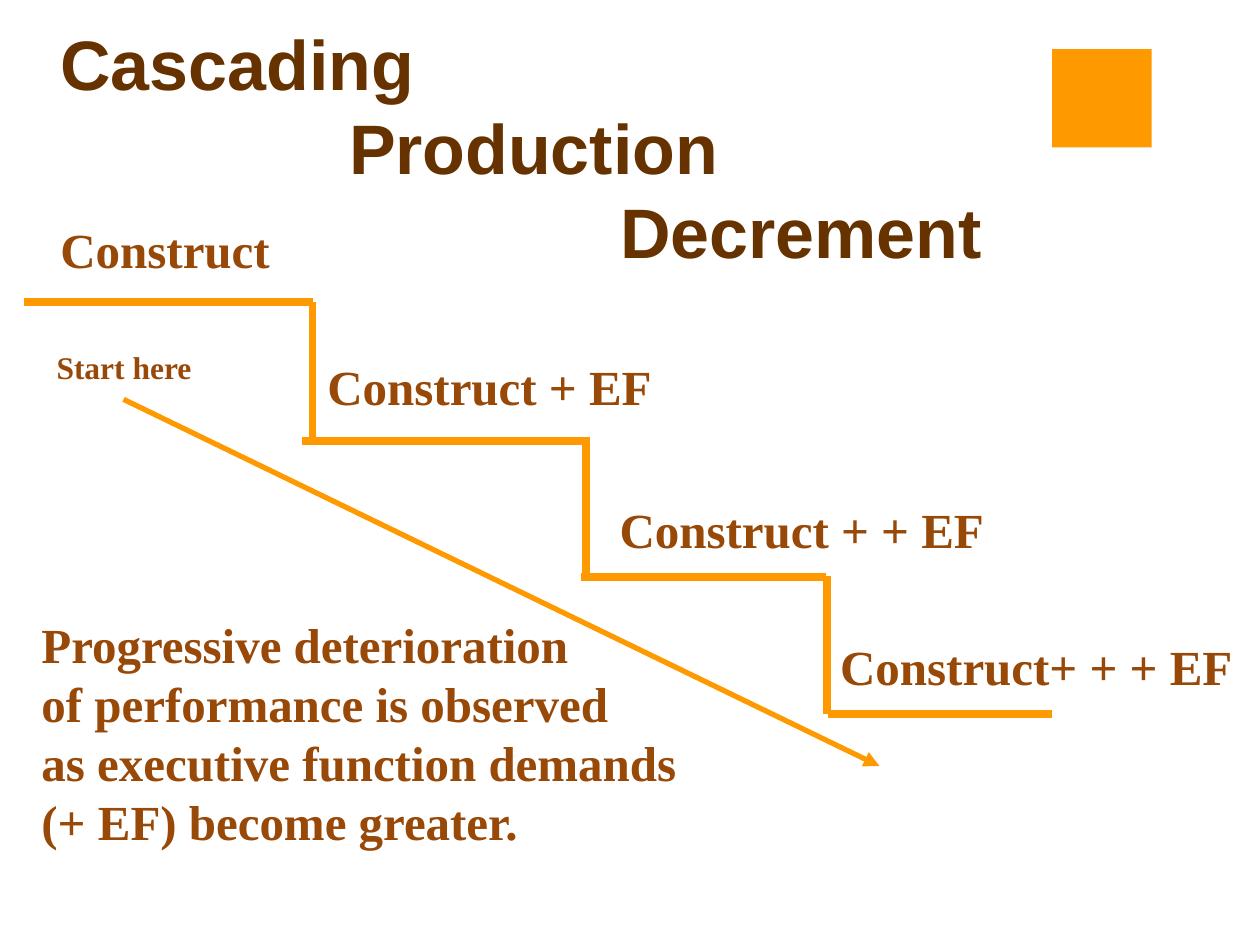
"""Build the Cascading Production Decrement staircase slide."""
import pptx
import pptx.dml.color
import pptx.enum.shapes
import pptx.enum.text
import pptx.oxml
import pptx.oxml.ns
import pptx.util

Pt = pptx.util.Pt
ORANGE, BROWN, DARK_BROWN = "FF9900", "984807", "663300"
LEADING = 1.2

TITLE = ["Cascading", "Production", "Decrement"]
TITLE_INDENTS = [0, 165, 320]
LABELS = [
    ("Construct", 27.4, 121.7, 135.4, 28),
    ("Construct + EF", 180, 200.2, 202.3, 28),
    ("Construct + + EF", 347, 282.2, 225.4, 28),
    ("Construct+ + + EF", 473, 360, 241.2, 28),
    ("Start here", 25.2, 195.1, 92.2, 18),
]
SUMMARY = [
    "Progressive deterioration",
    "of performance is observed",
    "as executive function demands (+ EF) become greater.",
]
TREADS = [(13.7, 178.6, 172.8), (172.8, 337, 252), (331.9, 472.3, 329.8), (473, 601.2, 408.2)]
RISERS = [(178.6, 172.8, 252), (334.8, 252, 331.2), (472.5, 329, 408.2)]
DECLINE = (70.6, 228.2, 502.6, 437.8)
MARKER = (601.2, 28.1, 56.9, 56.2)


def color(hex_value):
    return pptx.dml.color.RGBColor.from_string(hex_value)


def add_text(slide, lines, left, top, width, height, size, indents=None,
             wrap=True, face="Times New Roman", ink=BROWN, anchor="TOP"):
    frame = slide.shapes.add_textbox(Pt(left), Pt(top), Pt(width), Pt(height)).text_frame
    frame.word_wrap = wrap
    frame.vertical_anchor = pptx.enum.text.MSO_ANCHOR[anchor]
    frame.text = "\n".join(lines)
    for paragraph, indent in zip(frame.paragraphs, indents or [0] * len(lines)):
        paragraph.line_spacing = Pt(size * LEADING)
        paragraph.alignment = pptx.enum.text.PP_ALIGN.LEFT
        if indent:
            paragraph._p.get_or_add_pPr().set("marL", str(Pt(indent)))
        for key, value in {"name": face, "size": Pt(size), "bold": True}.items():
            setattr(paragraph.font, key, value)
        paragraph.font.color.rgb = color(ink)


def add_line(slide, x1, y1, x2, y2, weight, arrow=False):
    line = slide.shapes.add_connector(
        pptx.enum.shapes.MSO_CONNECTOR.STRAIGHT, Pt(x1), Pt(y1), Pt(x2), Pt(y2))
    line.line.color.rgb = color(ORANGE)
    line.line.width = Pt(weight)
    if arrow:
        head = pptx.oxml.parse_xml(
            f'<a:tailEnd {pptx.oxml.ns.nsdecls("a")} type="triangle"/>')
        line.line._get_or_add_ln().append(head)
    line._element.spPr.append(
        pptx.oxml.parse_xml(f'<a:effectLst {pptx.oxml.ns.nsdecls("a")}/>'))


def main():
    deck = pptx.Presentation()
    deck.slide_width, deck.slide_height = Pt(720), Pt(540)
    slide = deck.slides.add_slide(deck.slide_layouts[6])

    for start, end, level in TREADS:
        add_line(slide, start, level, end, level, 4.5)
    for across, upper, lower in RISERS:
        add_line(slide, across, upper, across, lower, 4.5)
    for label, left, top, width, size in LABELS:
        add_text(slide, [label], left, top, width, size * LEADING + 7.2, size, wrap=False)
    add_text(slide, SUMMARY, 16.6, 347.8, 390.2, 141.8, 28)
    add_line(slide, *DECLINE, 3, arrow=True)

    marker = slide.shapes.add_shape(
        pptx.enum.shapes.MSO_SHAPE.RECTANGLE, *map(Pt, MARKER))
    marker.shadow.inherit = False
    marker.fill.solid()
    marker.fill.fore_color.rgb = color(ORANGE)
    marker.line.fill.background()

    add_text(slide, TITLE, 27.4, 38.9, 648, 90, 40, TITLE_INDENTS,
             face="Arial", ink=DARK_BROWN, anchor="MIDDLE")
    deck.save("out.pptx")


if __name__ == "__main__":
    main()
